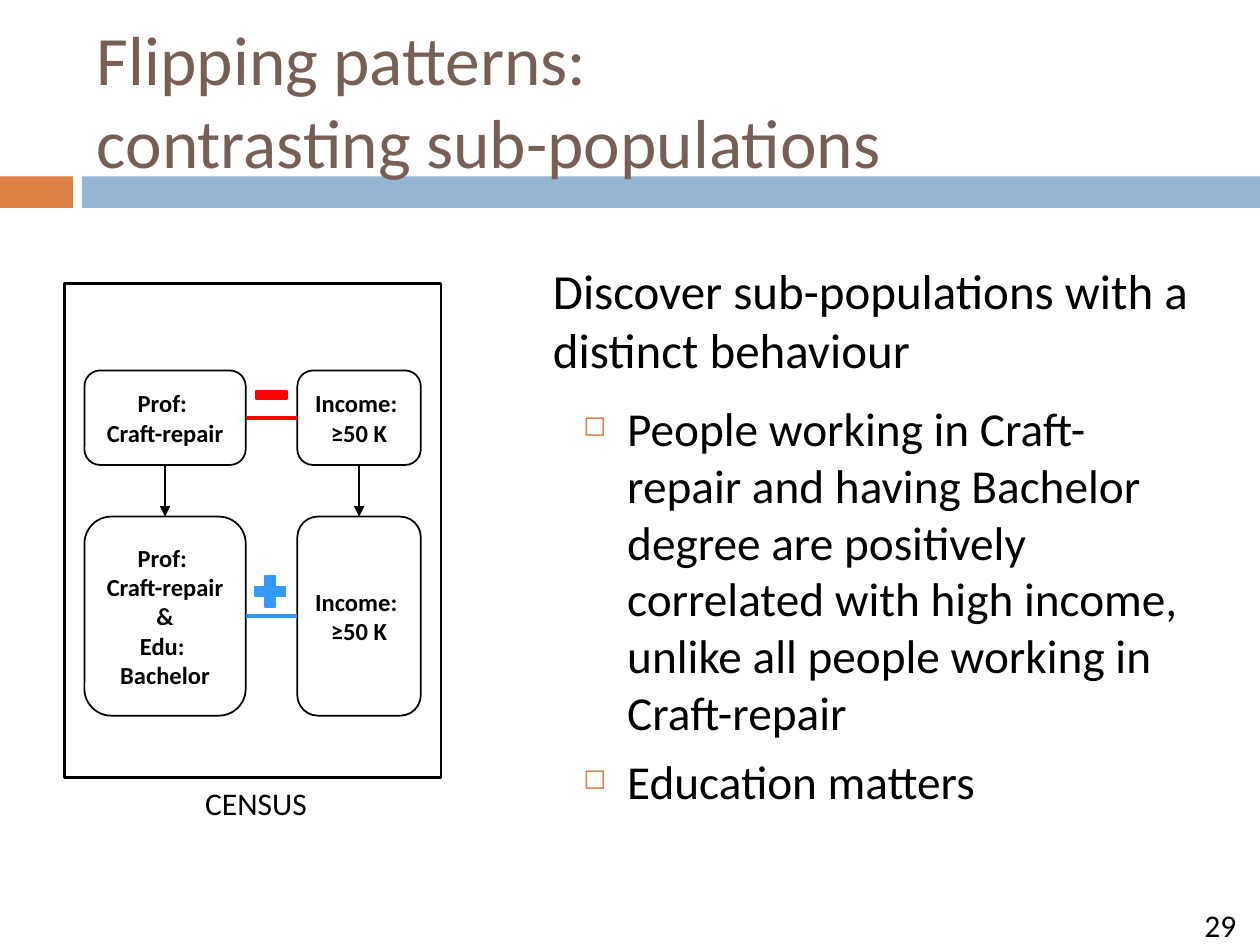
from lxml.etree import SubElement
from pptx import Presentation
from pptx.dml.color import RGBColor
from pptx.enum.shapes import MSO_CONNECTOR, MSO_SHAPE
from pptx.enum.text import MSO_ANCHOR, PP_ALIGN
from pptx.oxml.ns import qn
from pptx.util import Inches, Pt

COLUMNS, ROWS = 100, 75
CELL = Inches(0.1)
FONT = "Calibri"
COLORS = {
    "title": "775F55", "text": "000000", "accent": "DD8047",
    "band": "94B6D2", "positive": "3399FF", "negative": "FF0000",
}
BOTTOM, TOP, RIGHT, LEFT = 2, 0, 3, 1


def grid(*lengths):
    """Turn columns and rows of the slide grid into slide units."""
    return [round(length * CELL) for length in lengths]


def color(name):
    return RGBColor.from_string(COLORS[name])


def format_text(text_frame, size, color_name="text", bold=False):
    for paragraph in text_frame.paragraphs:
        for run in paragraph.runs:
            run.font.name = FONT
            run.font.size = Pt(size)
            run.font.bold = bold
            run.font.color.rgb = color(color_name)


def add_text(slide, area, text, size, color_name="text", anchor=MSO_ANCHOR.TOP):
    text_frame = slide.shapes.add_textbox(*grid(*area)).text_frame
    text_frame.word_wrap = True
    text_frame.vertical_anchor = anchor
    text_frame.text = text
    format_text(text_frame, size, color_name)
    return text_frame


def add_shape(slide, kind, area, fill=None, line=None, line_width=1):
    shape = slide.shapes.add_shape(kind, *grid(*area))
    shape.shadow.inherit = False
    if fill:
        shape.fill.solid()
        shape.fill.fore_color.rgb = color(fill)
    else:
        shape.fill.background()
    if line:
        shape.line.color.rgb = color(line)
        shape.line.width = Pt(line_width)
    else:
        shape.line.fill.background()
    return shape


def add_node(slide, area, text):
    node = add_shape(slide, MSO_SHAPE.ROUNDED_RECTANGLE, area, line="text")
    text_frame = node.text_frame
    text_frame.margin_left = text_frame.margin_right = Inches(0.05)
    text_frame.vertical_anchor = MSO_ANCHOR.MIDDLE
    text_frame.text = text
    format_text(text_frame, 14, bold=True)
    for paragraph in text_frame.paragraphs:
        paragraph.alignment = PP_ALIGN.CENTER
    return node


def connect(slide, start, start_side, end, end_side, color_name, width, arrow=False):
    connector = slide.shapes.add_connector(MSO_CONNECTOR.STRAIGHT, 0, 0, 0, 0)
    connector.begin_connect(start, start_side)
    connector.end_connect(end, end_side)
    connector.line.color.rgb = color(color_name)
    connector.line.width = Pt(width)
    if arrow:
        SubElement(connector.line._get_or_add_ln(), qn("a:tailEnd"), type="triangle")
    SubElement(connector._element.spPr, qn("a:effectLst"))


def add_bullet(paragraph):
    paragraph.space_before = Pt(7)
    properties = paragraph._p.get_or_add_pPr()
    properties.set("marL", str(Inches(0.35)))
    properties.set("indent", str(-Inches(0.35)))
    bullet_color = SubElement(properties, qn("a:buClr"))
    SubElement(bullet_color, qn("a:srgbClr"), val=COLORS["accent"])
    SubElement(properties, qn("a:buSzPct"), val="60000")
    SubElement(properties, qn("a:buChar"), char="◻")


def add_header(slide):
    add_shape(slide, MSO_SHAPE.RECTANGLE, (0, 14, 5.8, 2.5), fill="accent")
    add_shape(slide, MSO_SHAPE.RECTANGLE, (6.5, 14, 93.5, 2.5), fill="band")
    add_text(slide, (6.7, 2.5, 89.2, 10.8),
             "Flipping patterns: \vcontrasting sub-populations",
             39.6, "title", MSO_ANCHOR.MIDDLE)


def add_explanation(slide):
    add_text(slide, (42.9, 20.2, 52.8, 10.4),
             "Discover sub-populations with a distinct behaviour", 28)
    points = add_text(
        slide, (45.3, 31.2, 50.6, 39.4),
        "People working in Craft-repair and having Bachelor degree are positively "
        "correlated with high income, unlike all people working in Craft-repair\n"
        "Education matters", 27)
    for paragraph in points.paragraphs:
        add_bullet(paragraph)


def add_census_diagram(slide):
    add_shape(slide, MSO_SHAPE.RECTANGLE, (5.1, 22.5, 29.9, 39.2),
              line="text", line_width=1.5)
    add_text(slide, (15.3, 61.7, 11.8, 4), "CENSUS", 18)

    profession = "Prof: \nCraft-repair"
    income = "Income: \n≥50 K"
    levels = [
        (29.4, 7.5, profession, "negative"),
        (41, 15.8, profession + "\n&\nEdu: \nBachelor", "positive"),
    ]
    pairs = []
    for top, height, condition, correlation in levels:
        pair = (add_node(slide, (6.7, top, 12.8, height), condition),
                add_node(slide, (23.6, top, 9.8, height), income))
        connect(slide, pair[0], RIGHT, pair[1], LEFT, correlation, 2.25)
        pairs.append(pair)
    for general, specific in zip(*pairs):
        connect(slide, general, BOTTOM, specific, TOP, "text", 0.79, arrow=True)

    add_shape(slide, MSO_SHAPE.MATH_MINUS, (19.9, 30.1, 3.3, 2.5), "negative", "negative")
    add_shape(slide, MSO_SHAPE.MATH_PLUS, (19.8, 45.3, 3.3, 3.3), "positive", "positive")


def main():
    presentation = Presentation()
    presentation.slide_width, presentation.slide_height = grid(COLUMNS, ROWS)
    slide = presentation.slides.add_slide(presentation.slide_layouts[6])
    add_header(slide)
    add_explanation(slide)
    add_census_diagram(slide)
    add_text(slide, (94.6, 71.4, 5.8, 2.7), "29", 18)
    presentation.save("out.pptx")


if __name__ == "__main__":
    main()
